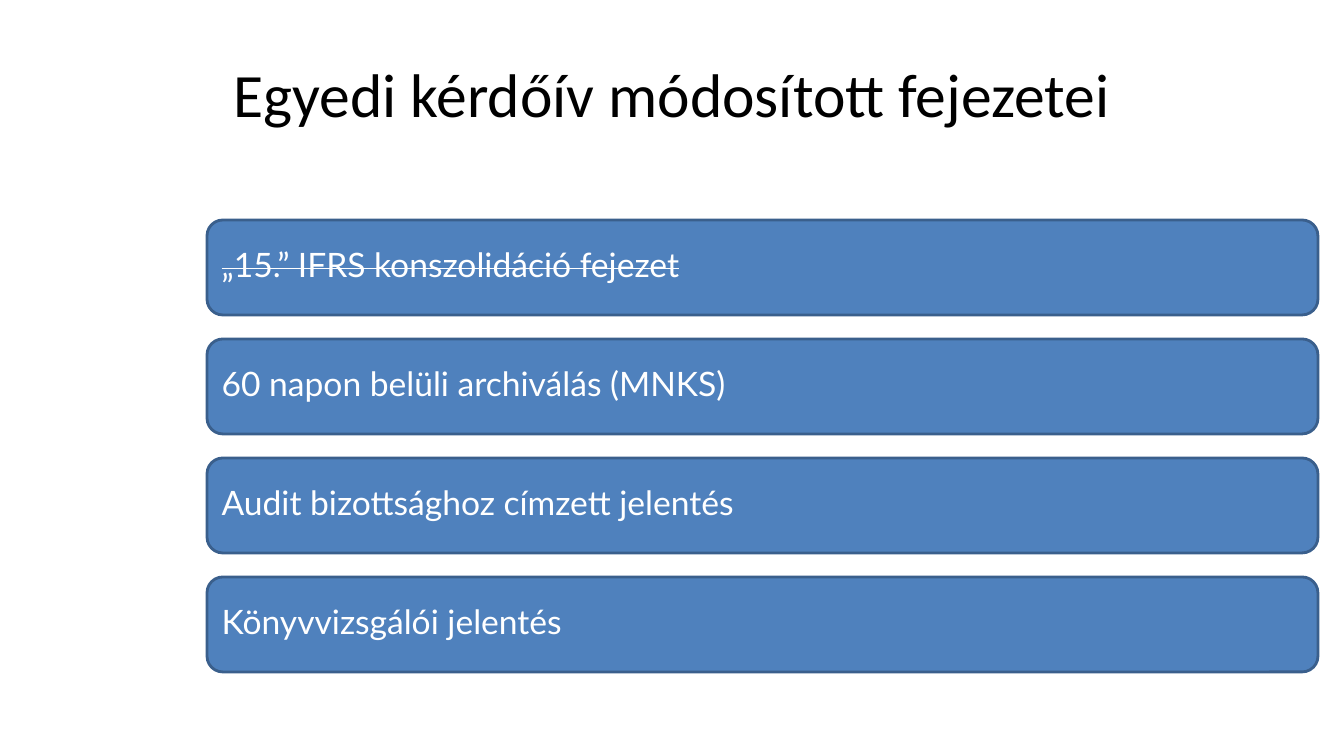
from dataclasses import dataclass

from pptx import Presentation
from pptx import util as u
from pptx.dml.color import RGBColor
from pptx.enum import shapes, text

EMU_PER_PX = 914400 / 100.8


@dataclass(frozen=True)
class Theme:
    title_font: str = "Calibri"
    title_size: int = 44
    title_color: str = "000000"
    bar_font: str = "Lato"
    bar_size: int = 24
    bar_text: str = "FFFFFF"
    bar_fill: str = "4F81BD"
    bar_line: str = "3A5F8C"
    bar_line_width: int = 2


THEME = Theme()

CHAPTERS = [
    ("„15.” IFRS konszolidáció fejezet", True),
    ("60 napon belüli archiválás (MNKS)", False),
    ("Audit bizottsághoz címzett jelentés", False),
    ("Könyvvizsgálói jelentés", False),
]


def px(length):
    return u.Emu(round(length * EMU_PER_PX))


def style_font(font, name, size, color):
    font.name = name
    font.size = u.Pt(size)
    font.color.rgb = RGBColor.from_string(color)


def place_title(slide, wording, box):
    title = slide.shapes.title
    title.left, title.top, title.width, title.height = map(px, box)
    frame = title.text_frame
    frame.text = wording
    frame.vertical_anchor = text.MSO_ANCHOR.MIDDLE
    heading = frame.paragraphs[0]
    heading.alignment = text.PP_ALIGN.CENTER
    style_font(heading.font, THEME.title_font, THEME.title_size, THEME.title_color)


def add_chapter_bar(slide, wording, removed, box):
    bar = slide.shapes.add_shape(
        shapes.MSO_SHAPE.ROUNDED_RECTANGLE, *map(px, box))
    bar.shadow.inherit = False
    bar.fill.solid()
    bar.fill.fore_color.rgb = RGBColor.from_string(THEME.bar_fill)
    bar.line.color.rgb = RGBColor.from_string(THEME.bar_line)
    bar.line.width = u.Pt(THEME.bar_line_width)

    frame = bar.text_frame
    frame.word_wrap = True
    frame.vertical_anchor = text.MSO_ANCHOR.MIDDLE
    frame.margin_left = frame.margin_right = px(10)
    chapter = frame.paragraphs[0]
    chapter.alignment = text.PP_ALIGN.LEFT
    chapter.line_spacing = 0.8
    chapter.space_after = u.Pt(6)
    style_font(chapter.font, THEME.bar_font, THEME.bar_size, THEME.bar_text)
    label = chapter.add_run()
    label.text = wording
    if removed:
        label._r.get_or_add_rPr().set("strike", "sngStrike")


def add_chapter_list(slide, chapters, box, gap):
    left, top, width, height = box
    bar_height = (height - gap * (len(chapters) - 1)) // len(chapters)
    for row, (wording, removed) in enumerate(chapters):
        bar_top = top + row * (bar_height + gap)
        add_chapter_bar(slide, wording, removed, (left, bar_top, width, bar_height))


def main():
    deck = Presentation()
    deck.slide_width, deck.slide_height = px(1344), px(756)
    slide = deck.slides.add_slide(deck.slide_layouts[5])
    place_title(slide, "Egyedi kérdőív módosított fejezetei", (67, 30, 1210, 126))
    add_chapter_list(slide, CHAPTERS, (207, 220, 1111, 452), gap=24)
    deck.save("out.pptx")


if __name__ == "__main__":
    main()
